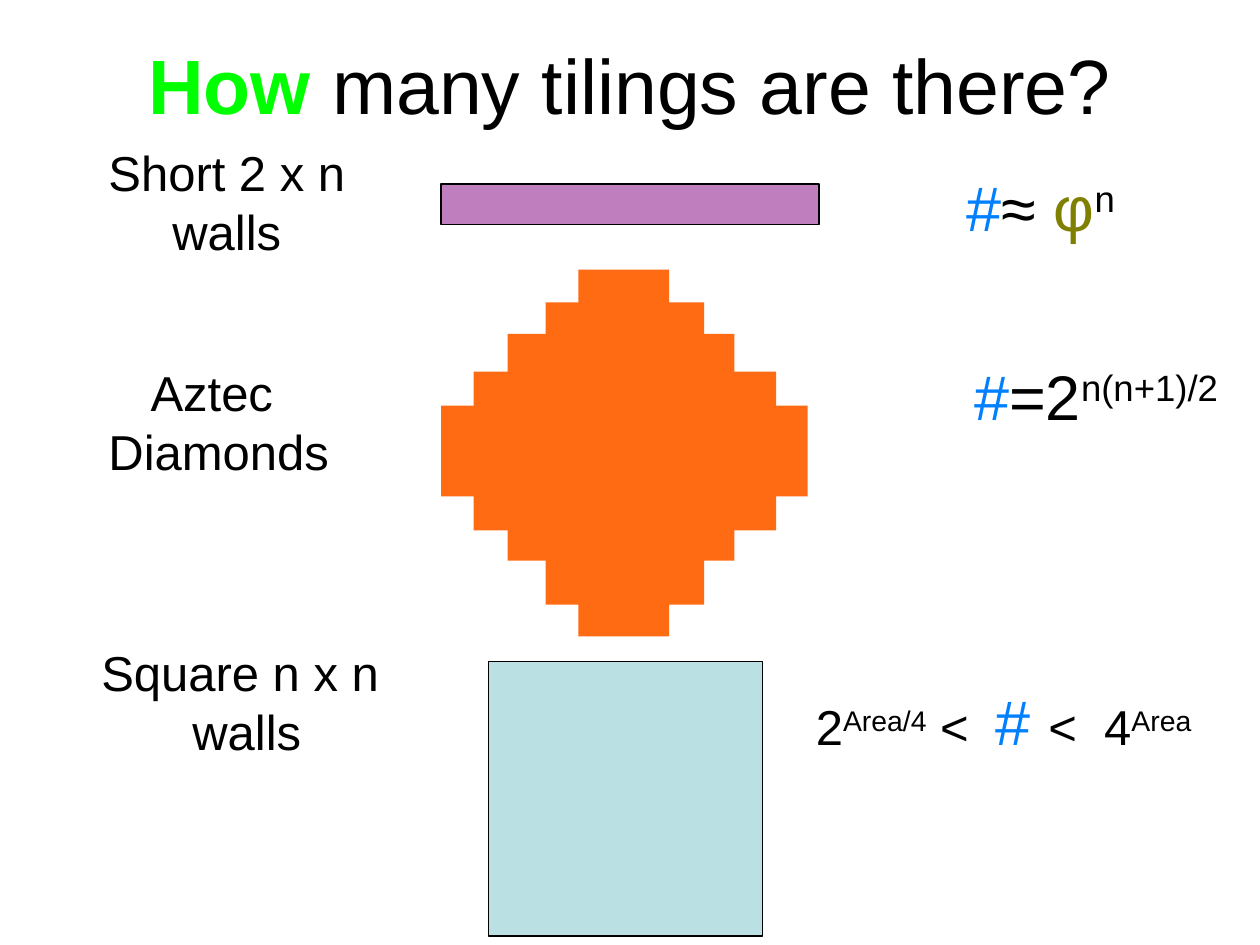
from pptx import Presentation
from pptx.dml.color import RGBColor
from pptx.enum.shapes import MSO_SHAPE as SHAPE
from pptx.enum.text import MSO_ANCHOR as ANCHOR, PP_ALIGN as ALIGN
from pptx.oxml.ns import qn
from pptx.util import Inches, Pt
from lxml import etree

BLACK = RGBColor(0, 0, 0)
GREEN = RGBColor(0, 255, 0)
BLUE = RGBColor(0, 0x80, 0xFF)
OLIVE = RGBColor(0x80, 0x80, 0)
PURPLE = RGBColor(0x80, 0, 0x80)
ORANGE = RGBColor(0xFF, 0x6B, 0x13)
PALE = RGBColor(0xBB, 0xE0, 0xE3)


def add_rect(x, y, w, h, color, outlined=False):
    s = slide.shapes.add_shape(SHAPE.RECTANGLE, Inches(x), Inches(y), Inches(w), Inches(h))
    s.shadow.inherit = False
    s.fill.solid()
    s.fill.fore_color.rgb = color
    if outlined:
        s.line.color.rgb = BLACK
        s.line.width = Pt(0.75)
    else:
        s.line.fill.background()
    return s


def add_text(x, y, w, h, size, lines, wrap=False):
    tf = slide.shapes.add_textbox(Inches(x), Inches(y), Inches(w), Inches(h)).text_frame
    tf.word_wrap = wrap
    for i, runs in enumerate(lines):
        p = tf.add_paragraph() if i else tf.paragraphs[0]
        p.alignment = ALIGN.CENTER
        p.font.name = "Arial"
        p.font.size = Pt(size)
        for text, color, raised in runs:
            r = p.add_run()
            r.text = text
            r.font.color.rgb = color
            if raised:
                r.font._element.set("baseline", "30000")
    return tf


prs = Presentation()
prs.slide_width, prs.slide_height = Inches(10), Inches(7.5)
slide = prs.slides.add_slide(prs.slide_layouts[6])

title = add_text(0.75, 0.04, 8.5, 1.25, 44,
                 [[("How ", GREEN, False), ("many tilings are there?", BLACK, False)]], wrap=True)
title.vertical_anchor = ANCHOR.MIDDLE
title.paragraphs[0].runs[0].font.bold = True

for x, y, w, lines in [
    (0.75, 1.08, 2.1, ("Short 2 x n ", "walls")),
    (0.75, 2.83, 1.97, ("Aztec ", "Diamonds")),
    (0.69, 5.05, 2.43, ("Square n x n", " walls")),
]:
    add_text(x, y, w, 1.04, 28, [[(line, BLACK, False)] for line in lines])

wall = add_rect(3.5, 1.46, 3, 0.32, PURPLE, outlined=True)
color = wall.fill._xPr.find(qn("a:solidFill"))[0]
etree.SubElement(color, qn("a:alpha")).set("val", "50000")

add_rect(3.88, 5.25, 2.17, 2.18, PALE, outlined=True)

for x, y, w, h in [
    (4.59, 2.14, 0.72, 2.91),
    (4.33, 2.4, 1.26, 2.4),
    (4.03, 2.65, 1.8, 1.8),
    (3.76, 2.95, 2.4, 1.26),
    (3.5, 3.22, 2.91, 0.72),
]:
    add_rect(x, y, w, h, ORANGE)

add_text(7.25, 1.29, 2.02, 0.71, 36,
         [[("#", BLUE, False), ("≈ ", BLACK, False), ("φ", OLIVE, False), ("n", BLACK, True)]], wrap=True)
add_text(7.56, 2.79, 2.28, 0.71, 36,
         [[("#", BLUE, False), ("=2", BLACK, False), ("n(n+1)/2", BLACK, True)]])
bounds = add_text(6.16, 5.37, 3.61, 0.71, 28, [[
    ("2", BLACK, False), ("Area/4", BLACK, True), (" <  ", BLACK, False),
    ("# ", BLUE, False), ("<  4", BLACK, False), ("Area", BLACK, True)]])
bounds.paragraphs[0].runs[3].font.size = Pt(36)

prs.save("out.pptx")
